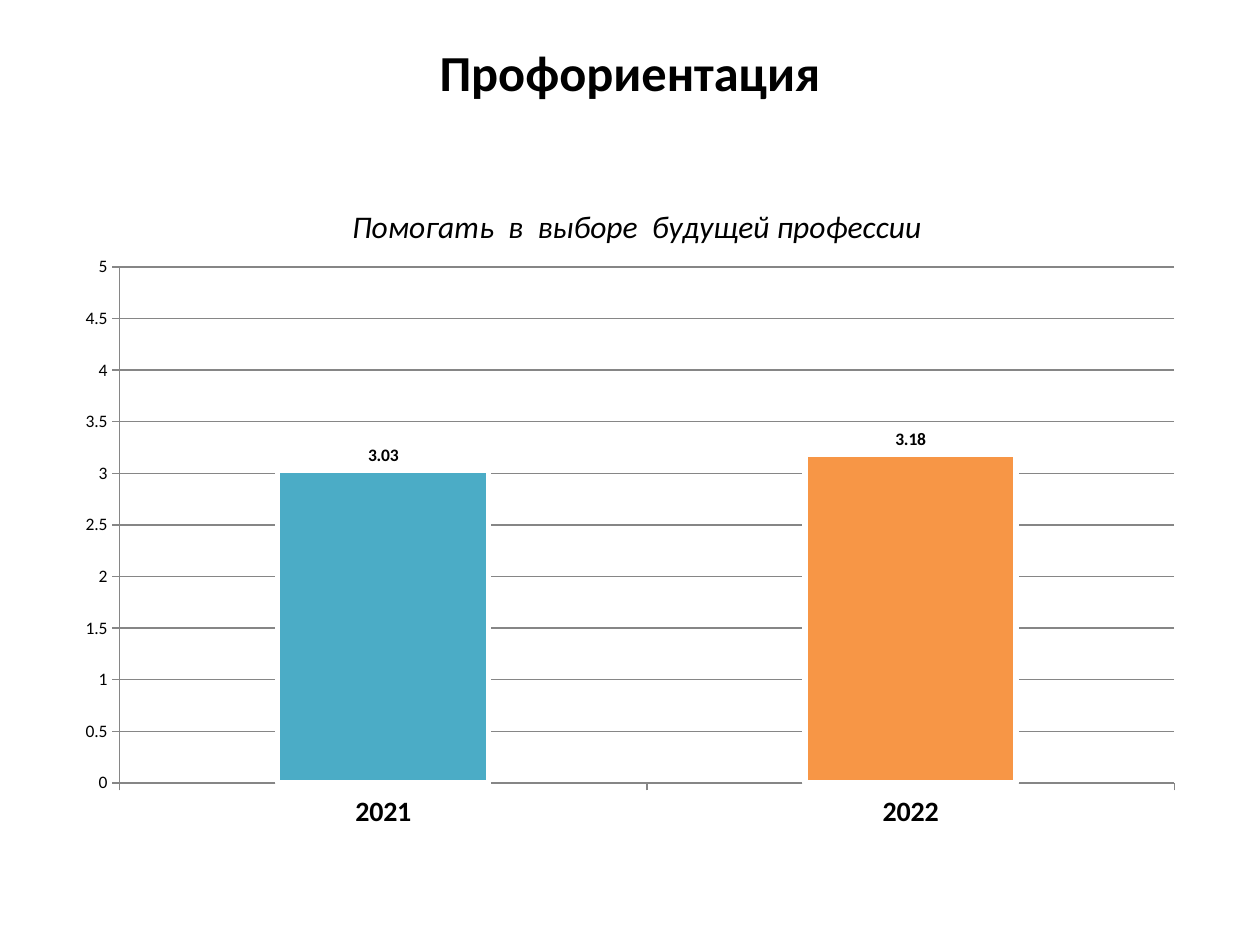
from lxml import etree
from pptx import Presentation
from pptx import util as u
from pptx.chart.data import CategoryChartData
from pptx.dml.color import RGBColor
from pptx.enum import chart as ch, text
from pptx.oxml.ns import qn

TITLE = "Профориентация"
QUESTION = "Помогать  в  выборе  будущей профессии"
SCORES = {"2021": 3.03, "2022": 3.18}
COLORS = {"text": "000000", "grid": "868686", "border": "FFFFFF",
          "2021": "4BACC6", "2022": "F79646"}
FONT = "Calibri"


def color(name):
    return RGBColor.from_string(COLORS[name])


def style(font, size, bold=False, italic=False):
    font.name, font.size = FONT, u.Pt(size)
    font.bold, font.italic = bold, italic
    font.color.rgb = color("text")


def place(element, **settings):
    """Give a chart title or plot area a manual layout, as fractions of the chart."""
    layout = element.find(qn("c:layout"))
    if layout is None:
        layout = etree.Element(qn("c:layout"))
        text_part = element.find(qn("c:tx"))
        element.insert(0 if text_part is None else 1, layout)
    for child in list(layout):
        layout.remove(child)
    manual = etree.SubElement(layout, qn("c:manualLayout"))
    for tag, value in settings.items():
        etree.SubElement(manual, qn("c:" + tag)).set("val", str(value))


deck = Presentation()
deck.slide_width, deck.slide_height = u.Inches(10), u.Inches(7.5)
page = deck.slides.add_slide(deck.slide_layouts[5])

title = page.shapes.title
title.left, title.top = u.Inches(0.5), u.Inches(0.3)
title.width, title.height = u.Inches(9), u.Inches(0.54)
title.text_frame.text = TITLE
title.text_frame.vertical_anchor = text.MSO_ANCHOR.MIDDLE
para = title.text_frame.paragraphs[0]
para.alignment = text.PP_ALIGN.CENTER
style(para.runs[0].font, 28.8, bold=True)

data = CategoryChartData()
data.categories = list(SCORES)
data.add_series(QUESTION, list(SCORES.values()))
chart = page.shapes.add_chart(
    ch.XL_CHART_TYPE.COLUMN_CLUSTERED, u.Inches(0.5), u.Inches(1.31),
    u.Inches(9), u.Inches(5.39), data).chart
style(chart.font, 10)
chart.has_legend = False
chart.has_title = True
heading = chart.chart_title
heading.include_in_layout = False
heading.text_frame.text = QUESTION
style(heading.text_frame.paragraphs[0].runs[0].font, 18, italic=True)

value_axis, category_axis = chart.value_axis, chart.category_axis
value_axis.minimum_scale, value_axis.maximum_scale = 0, 5
value_axis.major_unit = 0.5
value_axis.has_major_gridlines = True
style(value_axis.tick_labels.font, 10)
style(category_axis.tick_labels.font, 16, bold=True)
for axis in (value_axis, category_axis):
    axis.major_tick_mark = ch.XL_TICK_MARK.OUTSIDE
for part in (value_axis, category_axis, value_axis.major_gridlines):
    part.format.line.color.rgb = color("grid")
    part.format.line.width = u.Pt(0.75)

plot = chart.plots[0]
plot.gap_width = 150
plot.vary_by_categories = False
series = plot.series[0]
for index, year in enumerate(SCORES):
    bar = series.points[index].format
    bar.fill.solid()
    bar.fill.fore_color.rgb = color(year)
    bar.line.color.rgb = color("border")
    bar.line.width = u.Pt(3)
labels = series.data_labels
labels.show_value = True
labels.position = ch.XL_LABEL_POSITION.OUTSIDE_END
style(labels.font, 10, bold=True)

plot_area = chart.element.find(".//" + qn("c:plotArea"))
place(heading.element if hasattr(heading, "element") else
      chart.element.find(".//" + qn("c:title")),
      xMode="edge", yMode="edge", x=0.25, y=0.05)
place(plot_area, layoutTarget="inner", xMode="edge", yMode="edge",
      x=0.05, y=0.15, w=0.93, h=0.76)

deck.save("out.pptx")
